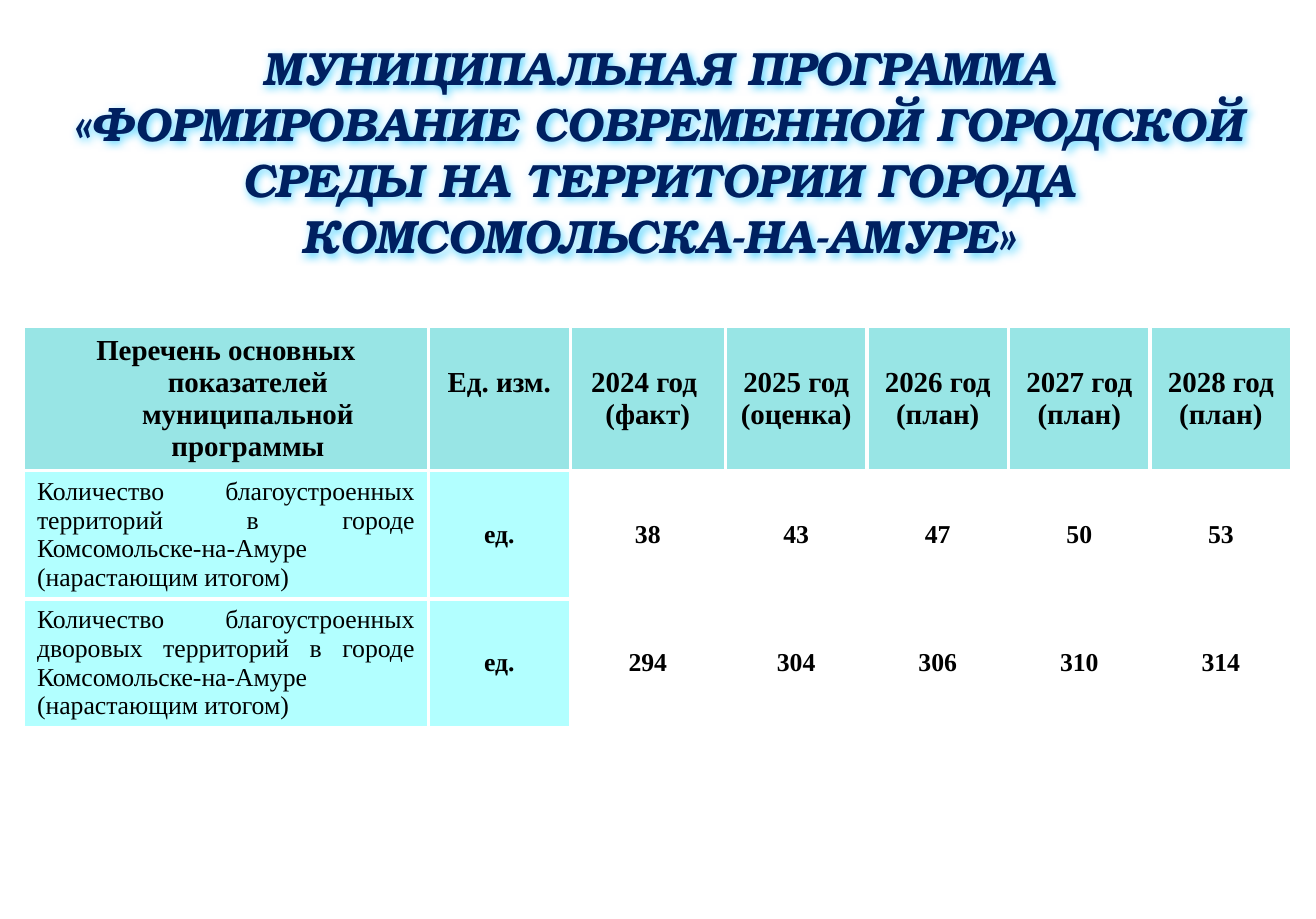
import pptx
import pptx.dml.color
import pptx.enum.text
import pptx.oxml
import pptx.oxml.ns
import pptx.util

Pt = pptx.util.Pt
RGBColor = pptx.dml.color.RGBColor
ALIGN = pptx.enum.text.PP_ALIGN
ANCHOR = pptx.enum.text.MSO_ANCHOR

# Content
TITLE = [
    "МУНИЦИПАЛЬНАЯ ПРОГРАММА",
    "«ФОРМИРОВАНИЕ СОВРЕМЕННОЙ ГОРОДСКОЙ СРЕДЫ НА ТЕРРИТОРИИ ГОРОДА КОМСОМОЛЬСКА-НА-АМУРЕ»",
]
ROWS = [
    ["Перечень основных показателей муниципальной программы", "Ед. изм.",
     "2024 год \n(факт)", "2025 год (оценка)", "2026 год (план)",
     "2027 год (план)", "2028 год (план)"],
    ["Количество благоустроенных территорий в городе Комсомольске-на-Амуре (нарастающим итогом)",
     "ед.", "38", "43", "47", "50", "53"],
    ["Количество благоустроенных дворовых территорий в городе Комсомольске-на-Амуре (нарастающим итогом)",
     "ед.", "294", "304", "306", "310", "314"],
]

# Design
NAVY = RGBColor(0x00, 0x20, 0x60)
BLACK = RGBColor(0x00, 0x00, 0x00)
HEADER_FILL = RGBColor(0x33, 0xCC, 0xCC)
LABEL_FILL = RGBColor(0x66, 0xFF, 0xFF)
BORDER = RGBColor(0xFF, 0xFF, 0xFF)
HALO = RGBColor(0x66, 0xD9, 0xFF)
COLUMN_WIDTHS = [252, 88, 96.5] + [88] * 4
ROW_HEIGHTS = [89.5, 79.5, 79.5]
HANGING = Pt(27.36)
HEADER_LINE = 20


def parse_drawing(xml):
    namespace = pptx.oxml.ns.nsdecls("a")
    return pptx.oxml.parse_xml(xml.replace(">", f" {namespace}>", 1))


def set_borders(cell):
    properties = cell._tc.get_or_add_tcPr()
    for side in "LRTB":
        properties.append(parse_drawing(
            f'<a:ln{side} w="{Pt(2.25)}"><a:solidFill><a:srgbClr val="{BORDER}"/>'
            f'</a:solidFill></a:ln{side}>'))


def fill_half_transparent(cell, color):
    cell.fill.solid()
    cell.fill.fore_color.rgb = color
    color_element = cell._tc.tcPr.find(".//" + pptx.oxml.ns.qn("a:solidFill") + "/"
                                       + pptx.oxml.ns.qn("a:srgbClr") + "[last()]")
    for color_element in cell._tc.tcPr.find(pptx.oxml.ns.qn("a:solidFill")):
        color_element.append(parse_drawing('<a:alpha val="50000"></a:alpha>'))


def format_paragraph(paragraph, alignment, name, size, color, bold, italic=False):
    paragraph.alignment = alignment
    for run in paragraph.runs:
        font = run.font
        font.name, font.size, font.bold, font.italic = name, Pt(size), bold, italic
        font.color.rgb = color


def fill_cell(cell, text, row, column):
    is_header = row == 0
    is_label = row > 0 and column == 0
    set_borders(cell)
    if is_header or column < 2:
        fill_half_transparent(cell, HEADER_FILL if is_header else LABEL_FILL)
    else:
        cell.fill.background()

    cell.vertical_anchor = ANCHOR.TOP if is_label else ANCHOR.MIDDLE
    cell.margin_left = cell.margin_right = Pt(8.64 if is_label else 7.92)
    cell.margin_top = cell.margin_bottom = Pt(4.32 if is_label else 4.9)
    if is_header and column == 1:
        # Lift the unit heading level with the years
        cell.margin_bottom = Pt(4.9 + HEADER_LINE)

    cell.text_frame.text = text
    has_hanging = column < 2 if is_header else column >= 2
    for paragraph in cell.text_frame.paragraphs:
        if has_hanging:
            properties = paragraph._p.get_or_add_pPr()
            properties.set("marL", str(HANGING))
            properties.set("indent", str(-HANGING))
        format_paragraph(paragraph, ALIGN.JUSTIFY if is_label else ALIGN.CENTER,
                         "Times New Roman", 18 if is_header else 16, BLACK, not is_label)


def add_title(slide):
    title = slide.shapes.title
    title.left, title.top, title.width, title.height = Pt(6.5), Pt(24.5), Pt(805.7), Pt(147.6)
    frame = title.text_frame
    frame.text = "\n".join(TITLE)
    frame.word_wrap = True
    frame.auto_size = pptx.enum.text.MSO_AUTO_SIZE.NONE
    frame.vertical_anchor = ANCHOR.BOTTOM
    frame.margin_left = frame.margin_right = frame.margin_top = frame.margin_bottom = Pt(8.64)
    for paragraph in frame.paragraphs:
        format_paragraph(paragraph, ALIGN.CENTER, "TeX Gyre Bonum", 29, NAVY, True, True)
    # Soft blue halo behind the letters
    title._element.spPr.append(parse_drawing(
        f'<a:effectLst><a:outerShdw blurRad="{Pt(5)}" dist="{Pt(2)}" dir="2700000">'
        f'<a:srgbClr val="{HALO}"/></a:outerShdw></a:effectLst>'))


def add_indicators(slide):
    table = slide.shapes.add_table(
        len(ROWS), len(COLUMN_WIDTHS), Pt(14.4), Pt(203),
        Pt(sum(COLUMN_WIDTHS)), Pt(sum(ROW_HEIGHTS))).table
    table.horz_banding = False
    for table_column, width in zip(table.columns, COLUMN_WIDTHS):
        table_column.width = Pt(width)
    for table_row, height in zip(table.rows, ROW_HEIGHTS):
        table_row.height = Pt(height)
    for row, texts in enumerate(ROWS):
        for column, text in enumerate(texts):
            fill_cell(table.cell(row, column), text, row, column)


def main():
    presentation = pptx.Presentation()
    presentation.slide_width, presentation.slide_height = Pt(818), Pt(571)
    slide = presentation.slides.add_slide(presentation.slide_layouts[5])
    add_title(slide)
    add_indicators(slide)
    presentation.save("out.pptx")


if __name__ == "__main__":
    main()
